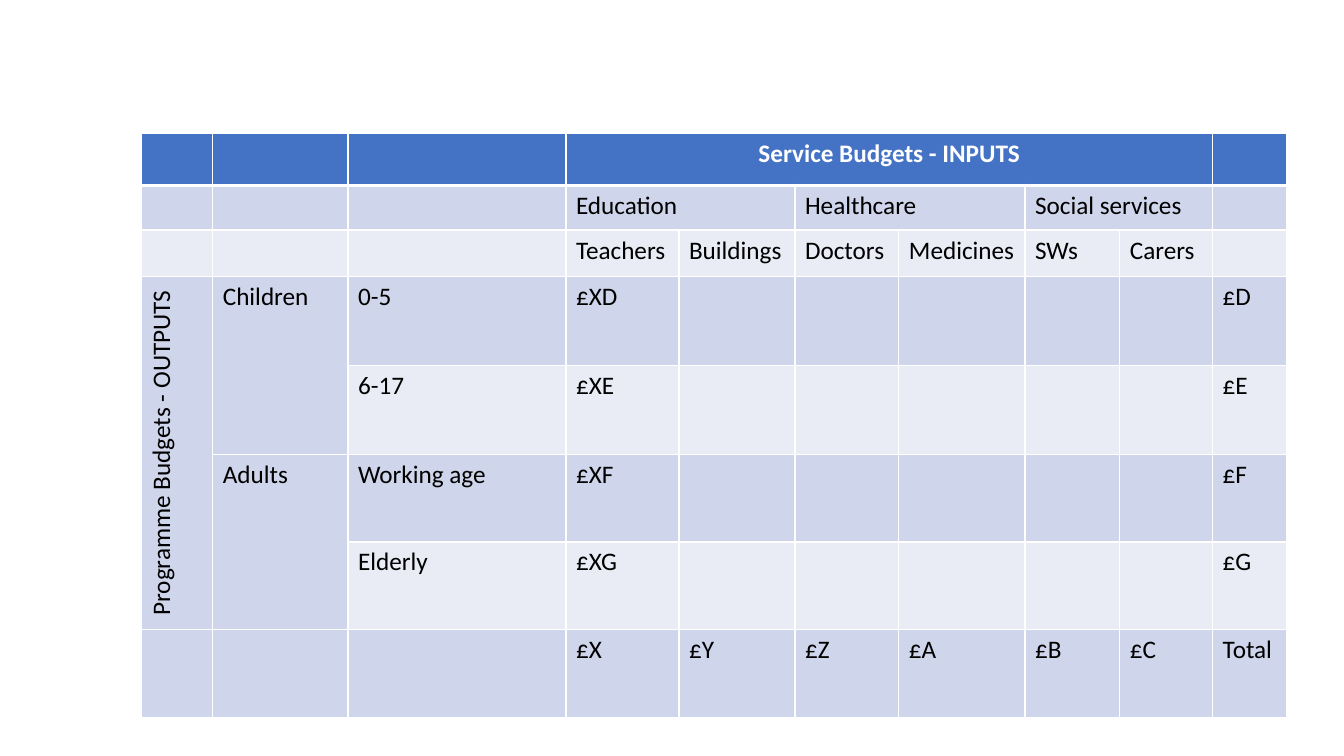
from dataclasses import dataclass
from lxml import etree
from pptx import Presentation
from pptx import util as u
from pptx.dml.color import RGBColor
from pptx.enum import text
from pptx.oxml.ns import qn


@dataclass(frozen=True)
class Theme:
    font: str = "Calibri"
    size: float = 18
    head: str = "4472C4"
    bands: tuple = ("E9EBF5", "CFD5EA")
    rule: str = "FFFFFF"
    light: str = "FFFFFF"
    dark: str = "000000"
    thin: float = 1
    thick: float = 3


THEME = Theme()
COLS = [0.71, 1.34, 2.16, 1.12, 1.15, 1.03, 1.25, 0.94, 0.92, 0.73]
ROWS = [0.52, 0.44, 0.46] + [0.88] * 2 + [0.87] * 3
SPANS = [(0, 3, 0, 8), (3, 0, 6, 0), (3, 1, 4, 1), (5, 1, 6, 1)]
SPANS += [(1, col, 1, col + 1) for col in (3, 5, 7)]
GROUPS = ["Education", "Healthcare", "Social services"]
INPUTS = ["Teachers", "Buildings", "Doctors", "Medicines", "SWs", "Carers"]
AGES = ["0-5", "6-17", "Working age", "Elderly"]
SIDE = "Programme Budgets - OUTPUTS"


def words():
    out = {(0, 3): "Service Budgets - INPUTS", (3, 0): SIDE,
           (3, 1): "Children", (5, 1): "Adults", (7, 9): "Total"}
    out.update({(1, 3 + 2 * i): name for i, name in enumerate(GROUPS)})
    for i, (name, mark) in enumerate(zip(INPUTS, "XYZABC")):
        out[2, 3 + i] = name
        out[7, 3 + i] = f"£{mark}"
    for i, (age, mark) in enumerate(zip(AGES, "DEFG")):
        out[3 + i, 2] = age
        out[3 + i, 3] = f"£X{mark}"
        out[3 + i, 9] = f"£{mark}"
    return out


def edge(cell, row):
    wide = {"T": row == 1, "B": row == 0}
    props = cell._tc.get_or_add_tcPr()
    for i, side in enumerate("LRTB"):
        width = THEME.thick if wide.get(side) else THEME.thin
        line = etree.Element(qn(f"a:ln{side}"), w=str(u.Pt(width)))
        fill = etree.SubElement(line, qn("a:solidFill"))
        etree.SubElement(fill, qn("a:srgbClr"), val=THEME.rule)
        props.insert(i, line)


def style(cell, row, label):
    head = row == 0
    cell.fill.solid()
    shade = THEME.head if head else THEME.bands[row % 2]
    cell.fill.fore_color.rgb = RGBColor.from_string(shade)
    edge(cell, row)
    cell.text = label
    para = cell.text_frame.paragraphs[0]
    form = {"name": THEME.font, "size": u.Pt(THEME.size), "bold": head}
    for key, val in form.items():
        setattr(para.font, key, val)
    for run in para.runs:
        for key, val in form.items():
            setattr(run.font, key, val)
        ink = THEME.light if head else THEME.dark
        run.font.color.rgb = RGBColor.from_string(ink)
    if head or label == SIDE:
        para.alignment = text.PP_ALIGN.CENTER
    if label == SIDE:
        cell._tc.get_or_add_tcPr().set("vert", "vert270")


def budget(slide, left, top, width, height):
    box = [u.Inches(n) for n in (left, top, width, height)]
    table = slide.shapes.add_table(len(ROWS), len(COLS), *box).table
    table.horz_banding = False
    for col, size in zip(table.columns, COLS):
        col.width = u.Inches(size * width / sum(COLS))
    for row, size in zip(table.rows, ROWS):
        row.height = u.Inches(size * height / sum(ROWS))
    for r1, c1, r2, c2 in SPANS:
        table.cell(r1, c1).merge(table.cell(r2, c2))
    labels = words()
    for r in range(len(ROWS)):
        for c in range(len(COLS)):
            style(table.cell(r, c), r, labels.get((r, c), ""))


def main():
    deck = Presentation()
    deck.slide_width, deck.slide_height = u.Inches(13.33), u.Inches(7.5)
    slide = deck.slides.add_slide(deck.slide_layouts[6])
    budget(slide, 1.4, 1.32, 11.36, 5.8)
    deck.save("out.pptx")


if __name__ == "__main__":
    main()
